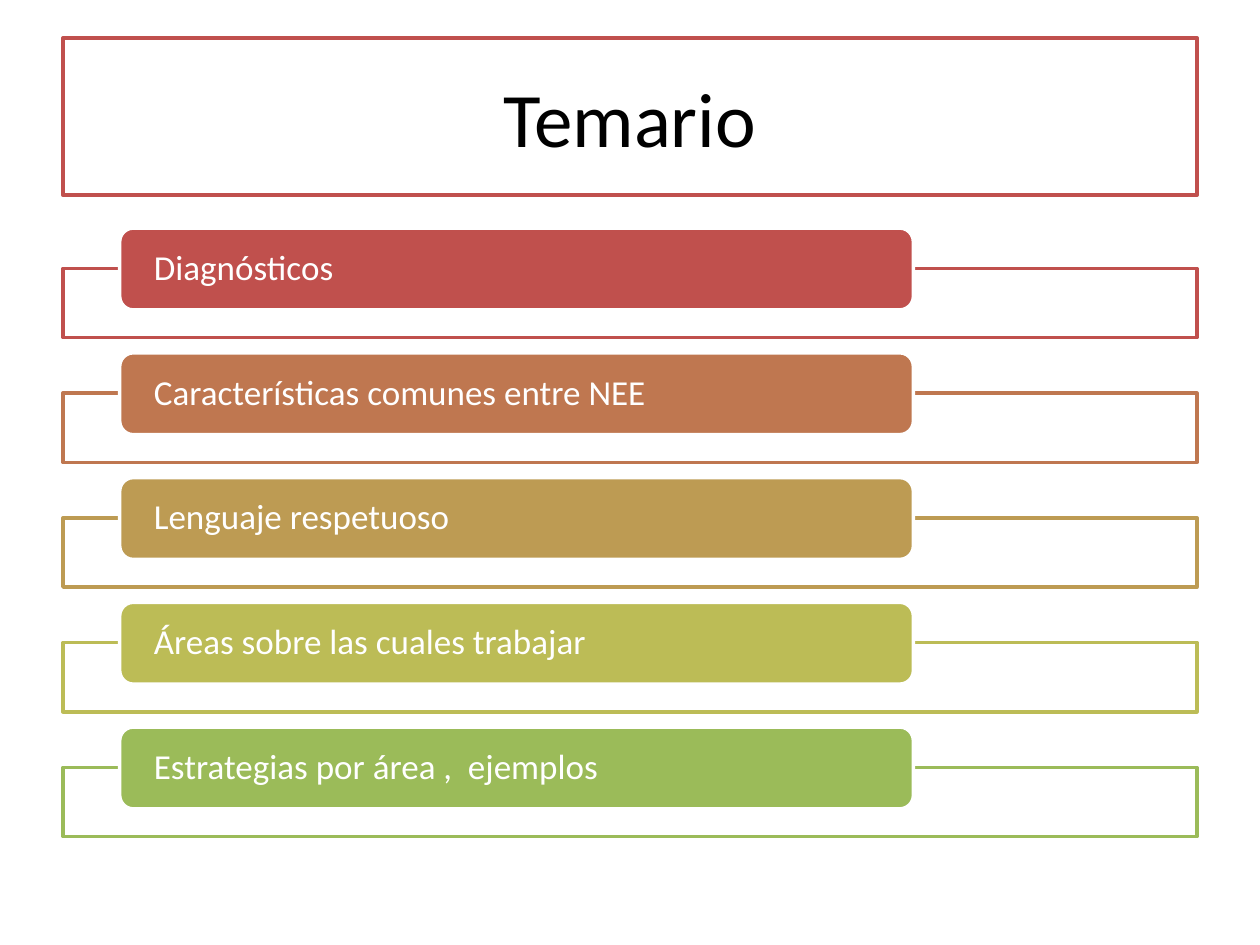
from dataclasses import dataclass

from pptx import Presentation
from pptx.dml.color import RGBColor
from pptx.enum.shapes import MSO_SHAPE
from pptx.enum.text import MSO_ANCHOR, PP_ALIGN
from pptx.util import Inches, Pt

COLORS = {
    "white": "FFFFFF",
    "black": "000000",
    "red": "C0504D",
    "orange": "BF7750",
    "gold": "BD9B53",
    "olive": "BCBC56",
    "green": "9BBB59",
}
FONT = "Calibri"
FIRST_TOP = 1.81
PITCH = 0.99
FRAME_OFFSET = 0.32


@dataclass
class Topic:
    text: str
    color: str


TOPICS = [
    Topic("Diagnósticos", "red"),
    Topic("Características comunes entre NEE", "orange"),
    Topic("Lenguaje respetuoso", "gold"),
    Topic("Áreas sobre las cuales trabajar", "olive"),
    Topic("Estrategias por área ,  ejemplos", "green"),
]


def rgb(name: str) -> RGBColor:
    return RGBColor.from_string(COLORS[name])


def add_box(slide, kind, left: float, top: float, width: float, height: float,
            fill: str, line: str):
    s = slide.shapes.add_shape(
        kind, Inches(left), Inches(top), Inches(width), Inches(height))
    s.shadow.inherit = False
    s.fill.solid()
    s.fill.fore_color.rgb = rgb(fill)
    s.line.color.rgb = rgb(line)
    s.line.width = Pt(2)
    return s


def set_text(s, text: str, size: int, color: str, align):
    tf = s.text_frame
    tf.text = text
    tf.word_wrap = True
    tf.vertical_anchor = MSO_ANCHOR.MIDDLE
    p = tf.paragraphs[0]
    p.alignment = align
    r = p.runs[0]
    r.font.name = FONT
    r.font.size = Pt(size)
    r.font.color.rgb = rgb(color)
    return tf


def add_title(slide, text: str) -> None:
    s = add_box(slide, MSO_SHAPE.RECTANGLE, 0.5, 0.3, 9, 1.25, "white", "red")
    set_text(s, text, 44, "black", PP_ALIGN.CENTER)


def add_topic(slide, topic: Topic, top: float) -> None:
    add_box(slide, MSO_SHAPE.RECTANGLE, 0.5, top + FRAME_OFFSET, 9, 0.55,
            "white", topic.color)
    s = add_box(slide, MSO_SHAPE.ROUNDED_RECTANGLE, 0.95, top, 6.3, 0.65,
                topic.color, "white")
    tf = set_text(s, topic.text, 20, "white", PP_ALIGN.LEFT)
    tf.margin_left = tf.margin_right = Inches(0.24)
    tf.margin_top = tf.margin_bottom = 0
    tf.paragraphs[0].line_spacing = 0.9


def main() -> None:
    prs = Presentation()
    prs.slide_width = Inches(10)
    prs.slide_height = Inches(7.5)
    slide = prs.slides.add_slide(prs.slide_layouts[6])
    add_title(slide, "Temario")
    for i, topic in enumerate(TOPICS):
        add_topic(slide, topic, FIRST_TOP + i * PITCH)
    prs.save("out.pptx")


if __name__ == "__main__":
    main()
